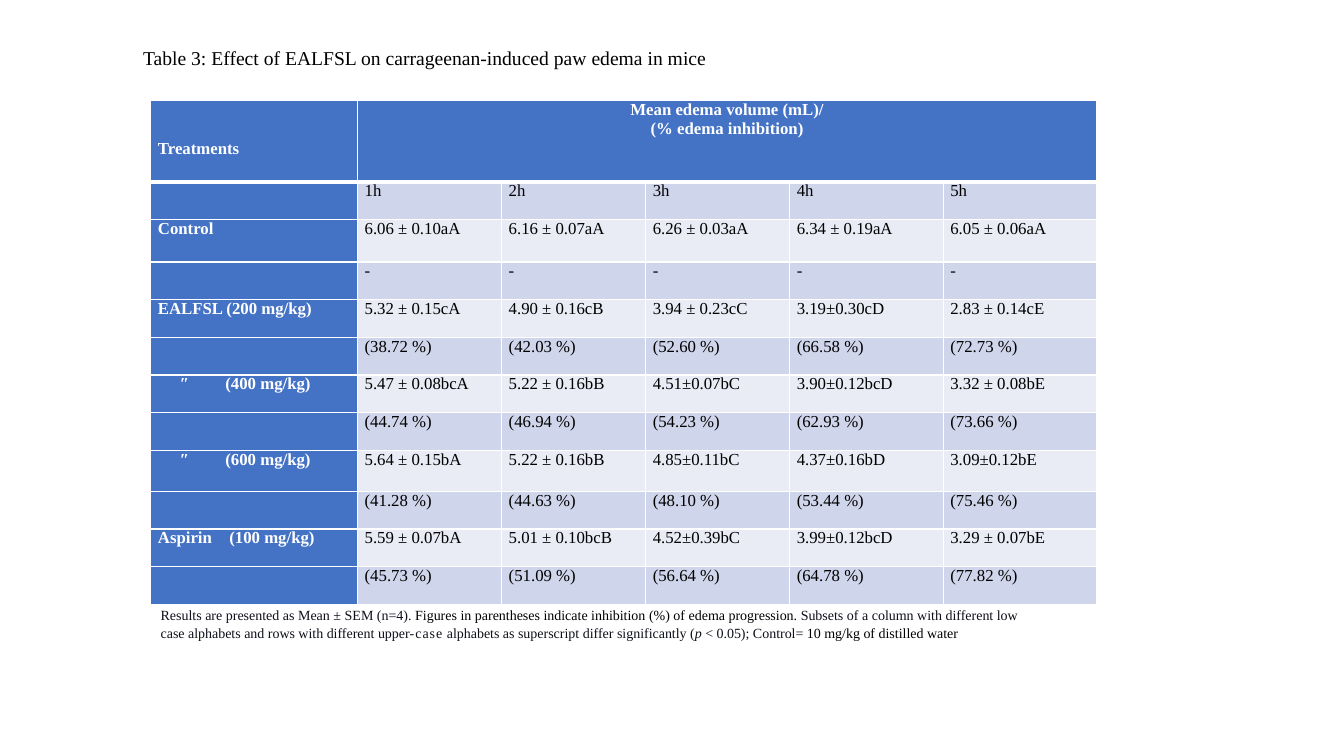
import lxml.etree
import pptx
import pptx.dml.color
import pptx.enum.text
import pptx.oxml.ns
import pptx.util

Cm = pptx.util.Cm
ALIGN = pptx.enum.text.PP_ALIGN
WHITE = pptx.dml.color.RGBColor(0xFF, 0xFF, 0xFF)
BLACK = pptx.dml.color.RGBColor(0x00, 0x00, 0x00)
INK = pptx.dml.color.RGBColor(0x0E, 0x10, 0x1A)
BLUE = pptx.dml.color.RGBColor(0x44, 0x72, 0xC4)
BAND_DARK = pptx.dml.color.RGBColor(0xCF, 0xD5, 0xEA)
BAND_LIGHT = pptx.dml.color.RGBColor(0xE9, 0xEB, 0xF5)


def write(paragraph, text, size=12, color=BLACK, bold=False, italic=False,
          align=ALIGN.LEFT, spacing=0):
    paragraph.alignment = align
    run = paragraph.add_run()
    run.text = text
    run.font.name = "Times New Roman"
    run.font.size = pptx.util.Pt(size)
    run.font.color.rgb = color
    run.font.bold = bold
    run.font.italic = italic
    if spacing:
        run._r.get_or_add_rPr().set("spc", str(spacing))


def add_xml(parent, tag, **attributes):
    child = lxml.etree.SubElement(parent, pptx.oxml.ns.qn(tag))
    for key, value in attributes.items():
        child.set(key, str(value))
    return child


deck = pptx.Presentation()
deck.slide_width, deck.slide_height = Cm(33.87), Cm(19.05)
slide = deck.slides.add_slide(deck.slide_layouts[5])

# Caption above the table
caption = slide.shapes.title
caption.left, caption.top, caption.width, caption.height = Cm(3.35), Cm(1.04), Cm(20.22), Cm(0.86)
caption.text_frame.word_wrap = True
caption.text_frame.auto_size = pptx.enum.text.MSO_AUTO_SIZE.SHAPE_TO_FIT_TEXT
caption.text_frame.vertical_anchor = pptx.enum.text.MSO_ANCHOR.TOP
write(caption.text_frame.paragraphs[0],
      "Table 3: Effect of EALFSL on carrageenan-induced paw edema in mice", size=14)

# Table contents
dash = ["-"] * 5
rows = [
    ["Treatments", "Mean edema volume (mL)/\n(% edema inhibition)", "", "", "", ""],
    ["", "1h", "2h", "3h", "4h", "5h"],
    ["Control", "6.06 ± 0.10aA", "6.16 ± 0.07aA", "6.26 ± 0.03aA", "6.34 ± 0.19aA", "6.05 ± 0.06aA"],
    ["", *dash],
    ["EALFSL (200 mg/kg)", "5.32 ± 0.15cA", "4.90 ± 0.16cB", "3.94 ± 0.23cC", "3.19±0.30cD", "2.83 ± 0.14cE"],
    ["", "(38.72 %)", "(42.03 %)", "(52.60 %)", "(66.58 %)", "(72.73 %)"],
    ["\tʺ\t(400 mg/kg)", "5.47 ± 0.08bcA", "5.22 ± 0.16bB", "4.51±0.07bC", "3.90±0.12bcD", "3.32 ± 0.08bE"],
    ["", "(44.74 %)", "(46.94 %)", "(54.23 %)", "(62.93 %)", "(73.66 %)"],
    ["\tʺ\t(600 mg/kg)", "5.64 ± 0.15bA", "5.22 ± 0.16bB", "4.85±0.11bC", "4.37±0.16bD", "3.09±0.12bE"],
    ["", "(41.28 %)", "(44.63 %)", "(48.10 %)", "(53.44 %)", "(75.46 %)"],
    ["Aspirin\t(100 mg/kg)", "5.59 ± 0.07bA", "5.01 ± 0.10bcB", "4.52±0.39bC", "3.99±0.12bcD", "3.29 ± 0.07bE"],
    ["", "(45.73 %)", "(51.09 %)", "(56.64 %)", "(64.78 %)", "(77.82 %)"],
]
column_widths = [5.21, 3.63, 3.63, 3.63, 3.87, 3.87]
row_heights = [2.04, 0.95, 1.07] + [0.95] * 5 + [1.03] + [0.95] * 3

results = slide.shapes.add_table(len(rows), len(column_widths), Cm(3.8), Cm(2.54),
                                 Cm(sum(column_widths)), Cm(sum(row_heights))).table
for column, width in zip(results.columns, column_widths):
    column.width = Cm(width)
for row, height in zip(results.rows, row_heights):
    row.height = Cm(height)
results.cell(0, 1).merge(results.cell(0, 5))

for r, texts in enumerate(rows):
    for c, text in enumerate(texts):
        cell = results.cell(r, c)
        heading = r == 0 or c == 0
        cell.margin_left = cell.margin_right = Cm(0.18)
        cell.margin_top = Cm(0.97) if r == c == 0 else 0
        cell.margin_bottom = 0

        # White borders, thicker beneath the header
        for side in "LRTB":
            points = 3 if (r, side) in [(0, "B"), (1, "T")] else 1
            border = add_xml(cell._tc.get_or_add_tcPr(), f"a:ln{side}", w=pptx.util.Pt(points))
            add_xml(add_xml(border, "a:solidFill"), "a:srgbClr", val=WHITE)
        cell.fill.solid()
        cell.fill.fore_color.rgb = BLUE if heading else BAND_DARK if r % 2 else BAND_LIGHT

        for i, line in enumerate(text.split("\n") if text else []):
            paragraph = cell.text_frame.paragraphs[0] if i == 0 else cell.text_frame.add_paragraph()
            write(paragraph, line, color=WHITE if heading else BLACK, bold=heading,
                  align=ALIGN.CENTER if r == 0 and c == 1 else ALIGN.LEFT)
            # Tab stops line up the doses
            if "\t" in line:
                stops = add_xml(paragraph._p.get_or_add_pPr(), "a:tabLst")
                for stop in ([0.55, 1.7] if line.startswith("\t") else [1.8]):
                    add_xml(stops, "a:tab", pos=Cm(stop), algn="l")

# Footnote below the table
footnote = slide.shapes.add_textbox(Cm(3.8), Cm(15.14), Cm(22.43), Cm(1.12)).text_frame
footnote.word_wrap = True
footnote.auto_size = pptx.enum.text.MSO_AUTO_SIZE.SHAPE_TO_FIT_TEXT
footnote.margin_right = Cm(0.58)
note = footnote.paragraphs[0]
note.line_spacing = 1.07
for text, style in [
    ("Results are presented as Mean ± SEM (n=4). ", {}),
    ("Figures in parentheses indicate inhibition (%) of edema progression. ", {"color": BLACK}),
    ("Subsets of a column with different low case alphabets and rows with different upper", {}),
    ("-case", {"spacing": 70}),
    (" alphabets as superscript differ significantly (", {}),
    ("p ", {"italic": True}),
    ("< 0.05); Control= ", {}),
    ("10 mg/kg of distilled water", {"color": BLACK}),
]:
    write(note, text, **{"size": 10, "color": INK, "align": ALIGN.JUSTIFY, **style})

deck.save("out.pptx")
